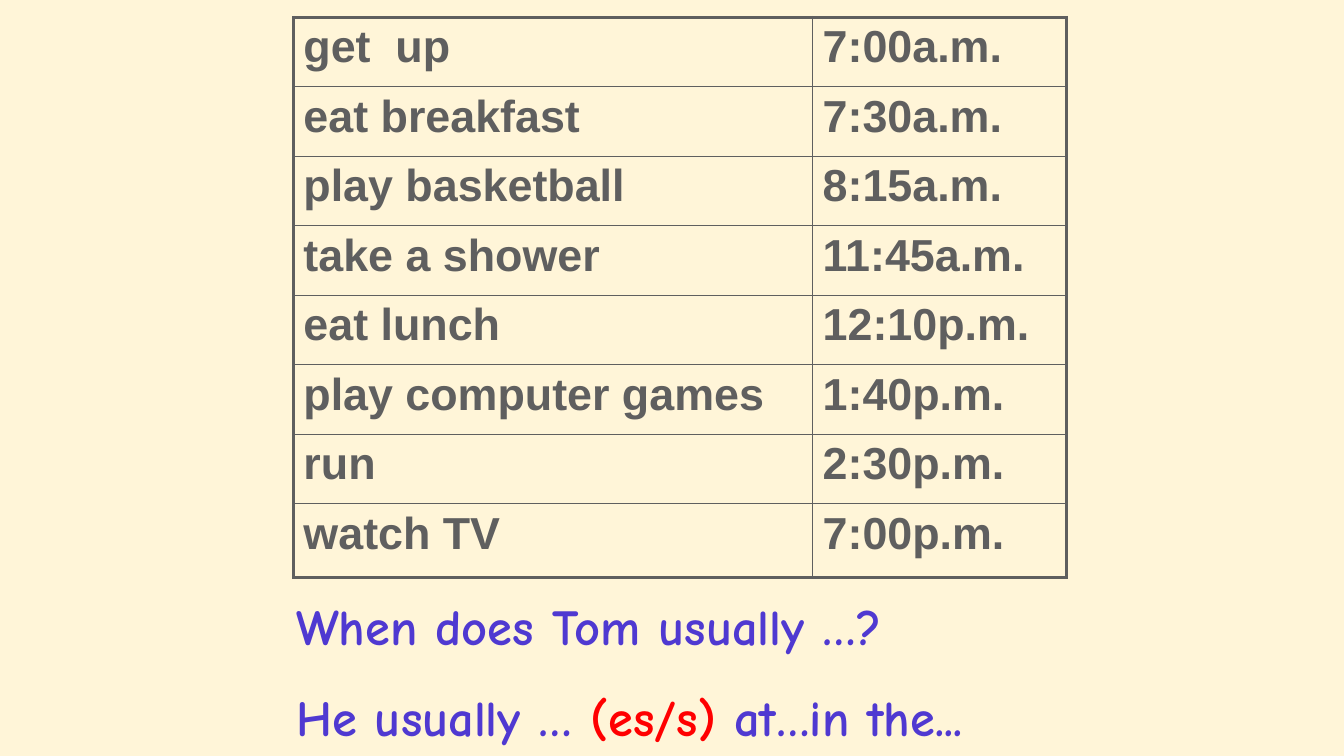
from lxml import etree
from pptx import Presentation
from pptx.dml.color import RGBColor
from pptx.enum.text import MSO_AUTO_SIZE
from pptx.oxml.ns import qn
from pptx.util import Inches, Pt

FIT_SHAPE = MSO_AUTO_SIZE.SHAPE_TO_FIT_TEXT

BACKGROUND = "FFF5D8"
GRAY = "5F5F5F"
VIOLET = "4F39D1"
RED = "FF0000"

SCHEDULE = [
    ("get  up", "7:00a.m."),
    ("eat breakfast", "7:30a.m."),
    ("play basketball", "8:15a.m."),
    ("take a shower", "11:45a.m."),
    ("eat lunch", "12:10p.m."),
    ("play computer games", "1:40p.m."),
    ("run", "2:30p.m."),
    ("watch TV", "7:00p.m."),
]
SENTENCES = [
    [("When does Tom usually …?", VIOLET)],
    [("He usually … ", VIOLET), ("(es/s) ", RED), ("at…in the...", VIOLET)],
]


def color(hex_string):
    return RGBColor.from_string(hex_string)


class SlideBuilder:
    table_font = "Arial"
    table_size = 32
    sentence_font = "Comic Neue"
    sentence_size = 36
    inner_border = 1
    outer_border = 2.25

    def __init__(self, slide):
        self.slide = slide

    def background(self, hex_string):
        fill = self.slide.background.fill
        fill.solid()
        fill.fore_color.rgb = color(hex_string)

    def format_run(self, run, name, size, hex_string):
        run.font.name = name
        run.font.size = Pt(size)
        run.font.bold = True
        run.font.color.rgb = color(hex_string)

    def border(self, cell, side, points):
        properties = cell._tc.get_or_add_tcPr()
        line = etree.SubElement(properties, qn(f"a:ln{side}"), w=str(Pt(points)))
        fill = etree.SubElement(line, qn("a:solidFill"))
        etree.SubElement(fill, qn("a:srgbClr"), val=GRAY)

    def table(self, left, top, widths, heights, rows):
        frame = self.slide.shapes.add_table(
            len(heights), len(widths), Inches(left), Inches(top),
            Inches(sum(widths)), Inches(sum(heights)))
        table = frame.table
        table.first_row = False
        table.horz_banding = False
        for column, width in zip(table.columns, widths):
            column.width = Inches(width)
        for row, height in zip(table.rows, heights):
            row.height = Inches(height)
        for row_index, texts in enumerate(rows):
            for column_index, text in enumerate(texts):
                cell = table.cell(row_index, column_index)
                cell.text_frame.text = text
                self.format_run(cell.text_frame.paragraphs[0].runs[0],
                                self.table_font, self.table_size, GRAY)
                outer_sides = {
                    "L": column_index == 0,
                    "R": column_index == len(widths) - 1,
                    "T": row_index == 0,
                    "B": row_index == len(heights) - 1,
                }
                for side, is_outer in outer_sides.items():
                    self.border(cell, side, self.outer_border if is_outer else self.inner_border)
                cell.fill.background()

    def sentences(self, left, top, width, height, lines):
        shape = self.slide.shapes.add_textbox(
            Inches(left), Inches(top), Inches(width), Inches(height))
        text_frame = shape.text_frame
        text_frame.word_wrap = True
        text_frame.auto_size = FIT_SHAPE
        for index, pieces in enumerate(lines):
            paragraph = text_frame.add_paragraph() if index else text_frame.paragraphs[0]
            paragraph.line_spacing = 1.5
            for text, hex_string in pieces:
                run = paragraph.add_run()
                run.text = text
                self.format_run(run, self.sentence_font, self.sentence_size, hex_string)


def main():
    presentation = Presentation()
    presentation.slide_width = Inches(13.33)
    presentation.slide_height = Inches(7.5)
    builder = SlideBuilder(presentation.slides.add_slide(presentation.slide_layouts[6]))
    builder.background(BACKGROUND)
    builder.table(2.91, 0.17, [5.15, 2.52], [0.69] * 7 + [0.73], SCHEDULE)
    builder.sentences(2.84, 5.56, 8.07, 1.9, SENTENCES)
    presentation.save("out.pptx")


if __name__ == "__main__":
    main()
